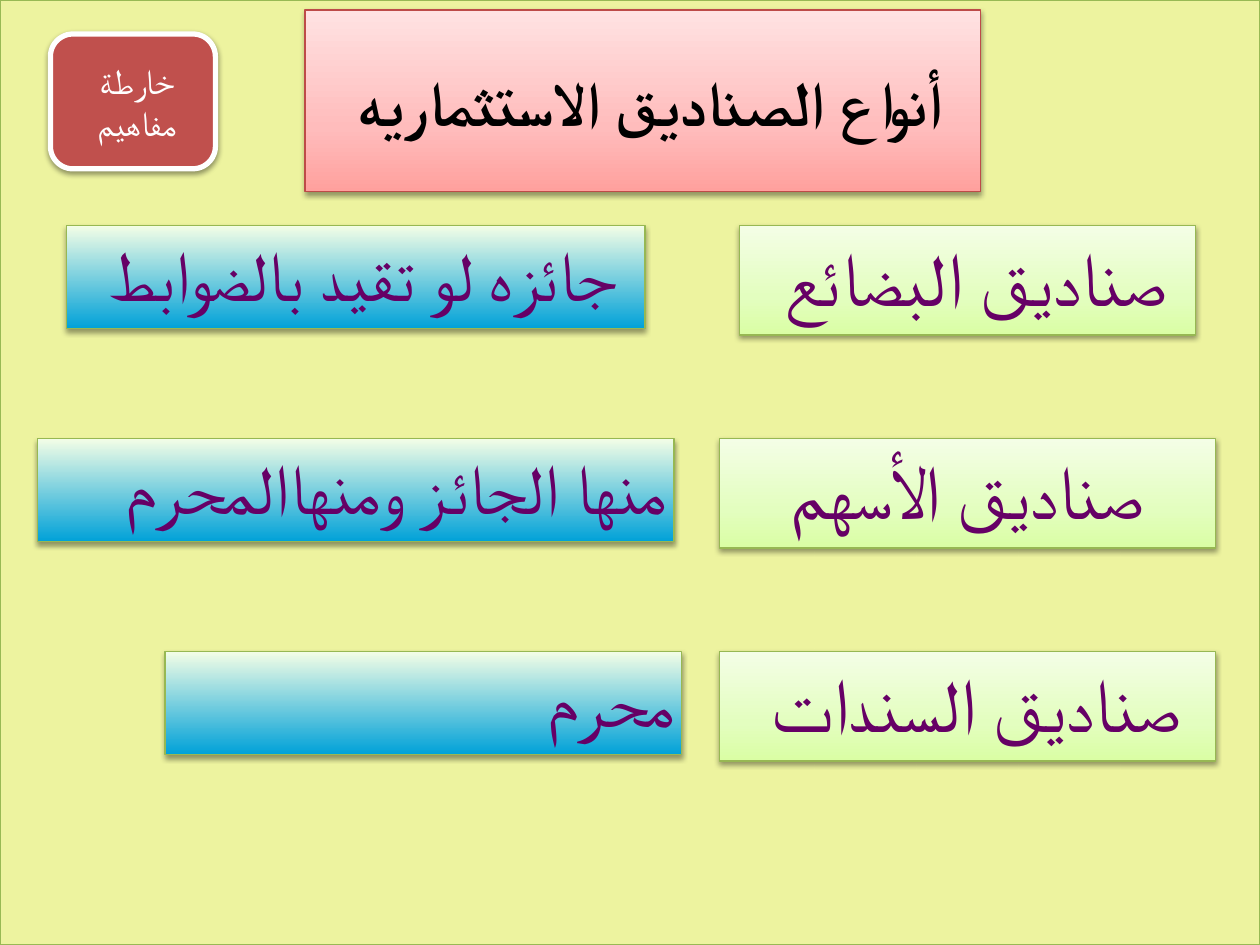
import dataclasses
import typing

import lxml.etree
import pptx
import pptx.dml.color
import pptx.enum.shapes
import pptx.enum.text
import pptx.oxml.ns
import pptx.util

Inches = pptx.util.Inches
Pt = pptx.util.Pt
qn = pptx.oxml.ns.qn
ALIGN = pptx.enum.text.PP_ALIGN
ANCHOR = pptx.enum.text.MSO_ANCHOR
PRESET = pptx.enum.shapes.MSO_SHAPE

FONT = "Calibri"
COLOURS = {
    "backdrop": "EDF39F",
    "backdrop_edge": "98B954",
    "box_edge": "97B853",
    "title_edge": "BD4B48",
    "badge": "C0504D",
    "purple": "660066",
    "white": "FFFFFF",
    "black": "000000",
}
GREEN = ((0, "DAFEA4"), (35, "E3FEBF"), (100, "F4FEE6"))
BLUE = ((0, "00A1D8"), (100, "F4FEE6"))
PINK = ((0, "FFA09D"), (35, "FFBCBC"), (100, "FFE2E2"))
FIRST_ROW, ROW_STEP = 1.79, 1.69


@dataclasses.dataclass(frozen=True)
class Box:
    text: str
    left: float
    width: float
    align: typing.Any = ALIGN.CENTER


@dataclasses.dataclass(frozen=True)
class Fund:
    kind: Box
    ruling: Box


FUNDS = (
    Fund(Box("صناديق البضائع ", 5.87, 3.62),
         Box("جائزه لو تقيد بالضوابط ", 0.53, 4.59)),
    Fund(Box("صناديق الأسهم", 5.71, 3.94),
         Box("منها الجائز ومنهاالمحرم ", 0.3, 5.05, ALIGN.RIGHT)),
    Fund(Box("صناديق السندات ", 5.71, 3.94),
         Box("محرم ", 1.31, 4.1, ALIGN.RIGHT)),
)


def rgb(name: str) -> pptx.dml.color.RGBColor:
    return pptx.dml.color.RGBColor.from_string(COLOURS[name])


def add_colour(parent: typing.Any, value: str) -> typing.Any:
    return lxml.etree.SubElement(parent, qn("a:srgbClr"), val=value)


def style(shape: typing.Any, fill: typing.Any, edge: str,
          edge_width: float = 0.75, blur: float = 3) -> None:
    if isinstance(fill, str):
        shape.fill.solid()
        shape.fill.fore_color.rgb = rgb(fill)
    else:
        shape.fill.gradient()
        shape.fill.gradient_angle = 90
        stops = shape._element.spPr.find(".//" + qn("a:gsLst"))
        for old_stop in list(stops):
            stops.remove(old_stop)
        for position, value in fill:
            stop = lxml.etree.SubElement(stops, qn("a:gs"), pos=str(position * 1000))
            add_colour(stop, value)
    shape.line.color.rgb = rgb(edge)
    shape.line.width = Pt(edge_width)
    effects = lxml.etree.SubElement(shape._element.spPr, qn("a:effectLst"))
    shadow = lxml.etree.SubElement(
        effects, qn("a:outerShdw"), blurRad=str(Pt(blur)), dist=str(Pt(1.6)),
        dir="5400000", rotWithShape="0")
    lxml.etree.SubElement(add_colour(shadow, COLOURS["black"]), qn("a:alpha"), val="38000")


def write(shape: typing.Any, text: str, *, size: float, colour: str,
          bold: bool = False, align: typing.Any = ALIGN.CENTER,
          anchor: typing.Any = ANCHOR.TOP, inset: float = 0.05) -> None:
    frame = shape.text_frame
    frame.word_wrap = True
    frame.auto_size = pptx.enum.text.MSO_AUTO_SIZE.NONE
    frame.vertical_anchor = anchor
    frame.margin_left = frame.margin_right = Inches(inset)
    frame.margin_top = frame.margin_bottom = Inches(0.05)
    frame.text = text
    for paragraph in frame.paragraphs:
        paragraph.alignment = align
        paragraph._p.get_or_add_pPr().set("rtl", "1")
        for run in paragraph.runs:
            run.font.name = FONT
            run.font.size = Pt(size)
            run.font.bold = bold
            run.font.color.rgb = rgb(colour)
            lxml.etree.SubElement(run._r.get_or_add_rPr(), qn("a:cs"), typeface=FONT)


def add_panel(slide: typing.Any, left: float, top: float, width: float,
              height: float, preset: typing.Any = PRESET.RECTANGLE) -> typing.Any:
    return slide.shapes.add_shape(
        preset, Inches(left), Inches(top), Inches(width), Inches(height))


def add_box(slide: typing.Any, box: Box, top: float, height: float,
            fill: typing.Any, size: float) -> None:
    panel = add_panel(slide, box.left, top, box.width, height)
    style(panel, fill, "box_edge")
    write(panel, box.text, size=size, colour="purple", align=box.align)


def main() -> None:
    deck = pptx.Presentation()
    deck.slide_width, deck.slide_height = Inches(10), Inches(7.5)
    slide = deck.slides.add_slide(deck.slide_layouts[5])

    backdrop = add_panel(slide, 0, 0, 10, 7.5)
    style(backdrop, "backdrop", "backdrop_edge", blur=5)

    title = slide.shapes.title
    title.left, title.top = Inches(2.42), Inches(0.08)
    title.width, title.height = Inches(5.36), Inches(1.44)
    style(title, PINK, "title_edge")
    write(title, "أنواع الصناديق الاستثماريه ", size=36, colour="black",
          bold=True, anchor=ANCHOR.MIDDLE, inset=0.1)
    backdrop._element.addnext(title._element)

    badge = add_panel(slide, 0.4, 0.27, 1.31, 1.07, PRESET.ROUNDED_RECTANGLE)
    style(badge, "badge", "white", edge_width=3)
    write(badge, "خارطة \nمفاهيم ", size=20, colour="white",
          anchor=ANCHOR.MIDDLE, inset=0.1)

    for row, fund in enumerate(FUNDS):
        top = FIRST_ROW + row * ROW_STEP
        add_box(slide, fund.kind, top, 0.87, GREEN, 43)
        add_box(slide, fund.ruling, top, 0.82, BLUE, 40)

    deck.save("out.pptx")


if __name__ == "__main__":
    main()
